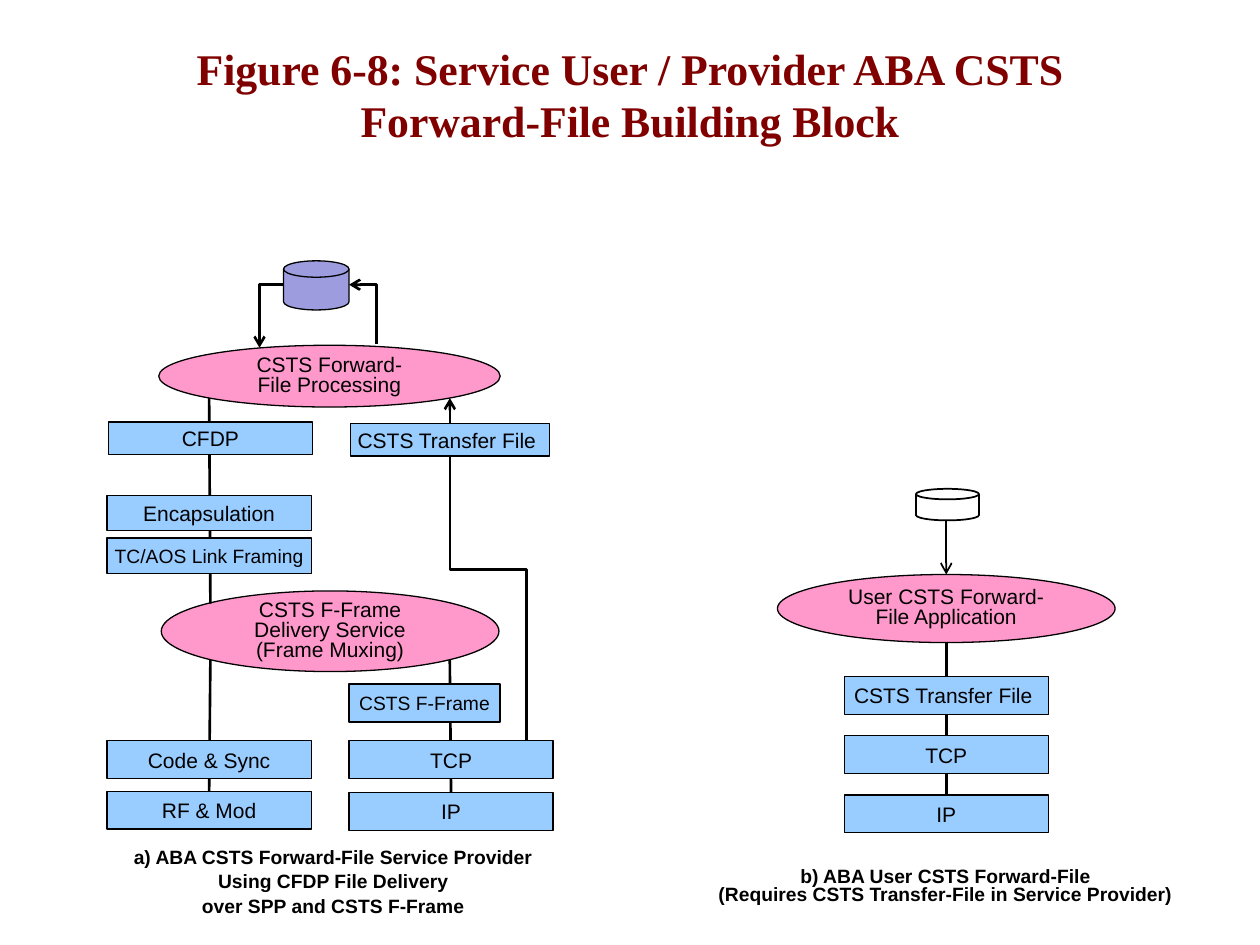
"""Build the ABA CSTS Forward-File building block slide."""
from lxml.etree import SubElement
from pptx import Presentation
from pptx.dml.color import RGBColor
from pptx.enum.shapes import MSO_CONNECTOR, MSO_SHAPE
from pptx.enum.text import MSO_ANCHOR, PP_ALIGN
from pptx.oxml.ns import qn
from pptx.util import Inches, Pt

BLACK = RGBColor(0x00, 0x00, 0x00)
WHITE = RGBColor(0xFF, 0xFF, 0xFF)
MAROON = RGBColor(0x80, 0x00, 0x00)
PINK = RGBColor(0xFF, 0x99, 0xCC)
SKY = RGBColor(0x99, 0xCC, 0xFF)
VIOLET = RGBColor(0x9C, 0x9C, 0xDF)

TITLE = "Figure 6-8: Service User / Provider ABA CSTS Forward-File Building Block"
LAYER_WIDTH = 1.62
LINK_LEFT, NETWORK_LEFT, USER_LEFT = 0.85, 2.77, 6.7

PROCESSES = [
    (["CSTS F-Frame", "Delivery Service", "(Frame Muxing)"], (1.28, 4.69, 2.68, 0.64)),
    (["CSTS Forward-", "File Processing"], (1.26, 2.74, 2.71, 0.49)),
    (["User CSTS Forward-", "File Application"], (6.17, 4.56, 2.68, 0.54)),
]
FILE_STORES = [
    ((2.25, 2.07, 0.52, 0.39), VIOLET, 0.75),
    ((7.27, 3.88, 0.5, 0.25), WHITE, 1),
]
LAYERS = [
    ("CFDP", 0.86, 3.35, LAYER_WIDTH, 0.26, 12),
    ("Encapsulation", LINK_LEFT, 3.93, LAYER_WIDTH, 0.28, 12),
    ("TC/AOS Link Framing", LINK_LEFT, 4.27, LAYER_WIDTH, 0.28, 11),
    ("Code & Sync", LINK_LEFT, 5.88, LAYER_WIDTH, 0.3, 12),
    ("RF & Mod", LINK_LEFT, 6.28, LAYER_WIDTH, 0.3, 12),
    ("CSTS Transfer File ", 2.78, 3.36, 1.58, 0.26, 12),
    ("CSTS F-Frame", NETWORK_LEFT, 5.43, 1.2, 0.3, 11),
    ("TCP", NETWORK_LEFT, 5.88, LAYER_WIDTH, 0.3, 12),
    ("IP", NETWORK_LEFT, 6.29, LAYER_WIDTH, 0.3, 12),
]
USER_LAYERS = ["CSTS Transfer File ", "TCP", "IP"]
USER_TOP, USER_PITCH = 5.37, 0.47
LAYERS += [
    (name, USER_LEFT, USER_TOP + row * USER_PITCH, LAYER_WIDTH, 0.3, 12)
    for row, name in enumerate(USER_LAYERS)
]
LINKS = [
    ((1.66, 3.16), (1.67, 4.79)),
    ((1.67, 5.24), (1.66, 6.28)),
    ((3.57, 5.24), (3.58, 6.3)),
    ((7.51, 5.1), (7.51, 6.31)),
]
CAPTIONS = [
    (["a) ABA CSTS Forward-File Service Provider", "Using CFDP File Delivery",
      "over SPP and CSTS F-Frame"], (0.95, 6.64, 3.39, 0.69), Pt(14)),
    (["b) ABA User CSTS Forward-File",
      "(Requires CSTS Transfer-File in Service Provider)"], (5.59, 6.84, 3.83, 0.4), 0.8),
]


def write(frame, lines, size, color=BLACK, font="Arial", bold=False, spacing=None):
    frame.vertical_anchor = MSO_ANCHOR.MIDDLE
    for index, line in enumerate(lines):
        paragraph = frame.paragraphs[0] if index == 0 else frame.add_paragraph()
        paragraph.alignment = PP_ALIGN.CENTER
        paragraph.line_spacing = spacing
        run = paragraph.add_run()
        run.text = line
        run.font.size = Pt(size)
        run.font.name = font
        run.font.bold = bold
        run.font.color.rgb = color


def add_text(slide, lines, box, wrap, *style):
    frame = slide.shapes.add_textbox(*map(Inches, box)).text_frame
    frame.word_wrap = wrap
    write(frame, lines, *style)


def add_node(slide, preset, box, fill, weight=0.75, inset=(0, 0)):
    node = slide.shapes.add_shape(preset, *map(Inches, box))
    node.shadow.inherit = False
    node.fill.solid()
    node.fill.fore_color.rgb = fill
    node.line.color.rgb = BLACK
    node.line.width = Pt(weight)
    frame = node.text_frame
    frame.word_wrap = True
    frame.margin_left = frame.margin_right = Inches(inset[0])
    frame.margin_top = frame.margin_bottom = Inches(inset[1])
    return frame


def add_link(slide, start, end, weight=1.5, arrow=None, preset=None):
    kind = MSO_CONNECTOR.ELBOW if preset else MSO_CONNECTOR.STRAIGHT
    link = slide.shapes.add_connector(kind, *map(Inches, start + end))
    link.line.color.rgb = BLACK
    link.line.width = Pt(weight)
    properties = link._element.spPr
    if preset:
        properties.find(qn("a:prstGeom")).set("prst", preset)
    if arrow:
        SubElement(link.line._get_or_add_ln(), qn(f"a:{arrow}"), type="arrow")
    SubElement(properties, qn("a:effectLst"))
    return link


def add_vertical_elbow(slide, start, end):
    (x1, y1), (x2, y2) = start, end
    center_x, center_y = (x1 + x2) / 2, (y1 + y2) / 2
    half_length, half_depth = (y2 - y1) / 2, (x2 - x1) / 2
    link = add_link(slide, (center_x + half_length, center_y - half_depth),
                    (center_x - half_length, center_y + half_depth),
                    arrow="headEnd", preset="bentConnector3")
    link._element.spPr.find(qn("a:xfrm")).set("rot", str(270 * 60000))


def main():
    deck = Presentation()
    deck.slide_width, deck.slide_height = Inches(10), Inches(7.5)
    slide = deck.slides.add_slide(deck.slide_layouts[6])

    add_text(slide, [TITLE], (0.75, 0.33, 8.5, 0.83), True, 25, MAROON, "Times New Roman", True)
    for lines, box in PROCESSES:
        write(add_node(slide, MSO_SHAPE.OVAL, box, PINK), lines, 12, spacing=0.8)
    for box, fill, weight in FILE_STORES:
        add_node(slide, MSO_SHAPE.FLOWCHART_MAGNETIC_DISK, box, fill, weight)
    for start, end in LINKS:
        add_link(slide, start, end)
    add_link(slide, (7.51, 4.13), (7.51, 4.56), 1, "tailEnd")
    add_link(slide, (2.77, 2.26), (2.99, 2.73), arrow="headEnd", preset="bentConnector2")
    add_link(slide, (2.25, 2.26), (2.06, 2.76), arrow="tailEnd", preset="bentConnector2")
    add_vertical_elbow(slide, (3.57, 3.16), (4.18, 5.88))
    for name, left, top, width, height, size in LAYERS:
        box = (left, top, width, height)
        write(add_node(slide, MSO_SHAPE.RECTANGLE, box, SKY, inset=(0.04, 0.03)), [name], size)
    for lines, box, spacing in CAPTIONS:
        add_text(slide, lines, box, False, 11, BLACK, "Arial", True, spacing)

    deck.save("out.pptx")


if __name__ == "__main__":
    main()
